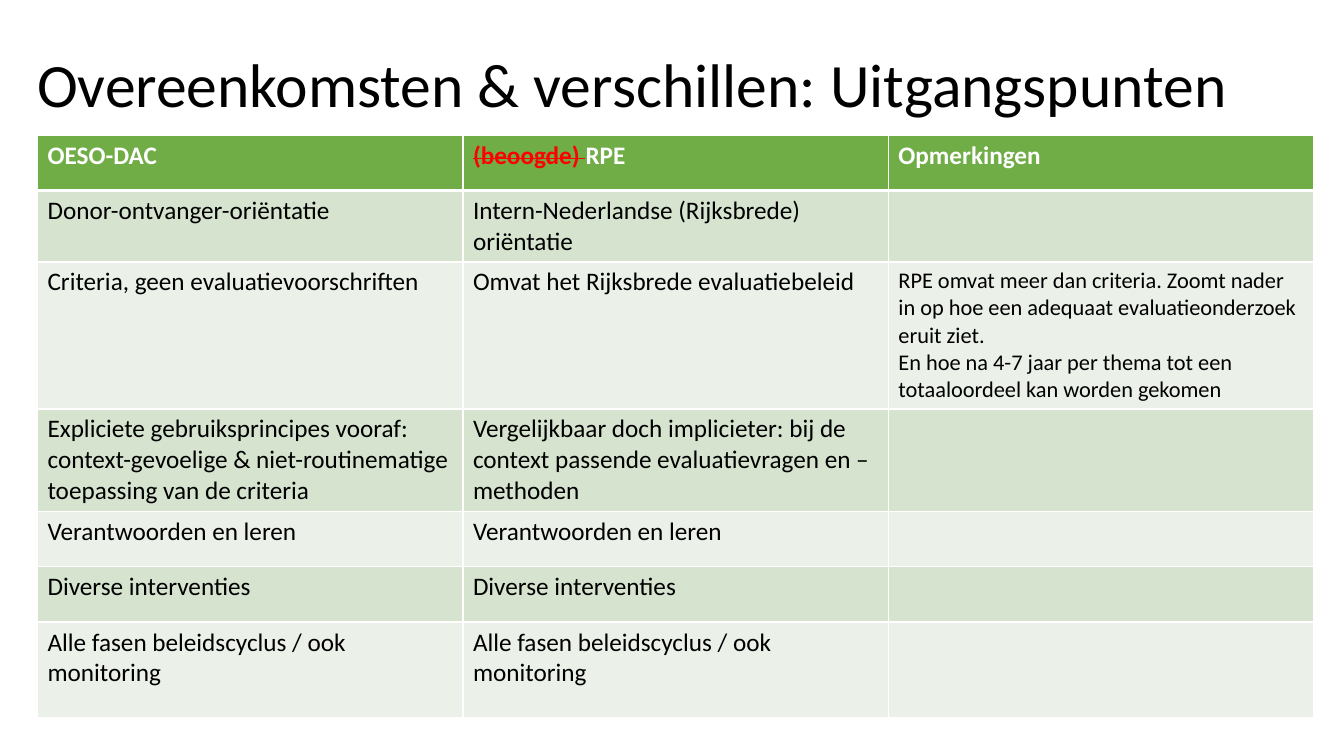
from pptx import Presentation
from pptx.dml.color import RGBColor
from pptx.enum.text import MSO_ANCHOR
from pptx.oxml import parse_xml
from pptx.oxml.ns import nsdecls
from pptx.util import Pt

COLORS = {
    "white": "FFFFFF",
    "black": "000000",
    "red": "FF0000",
    "header": "70AD47",
    "band_dark": "D5E3CF",
    "band_light": "EBF1E9",
}

HEADINGS = ["OESO-DAC", "RPE", "Opmerkingen"]
PRINCIPLES = [
    ["Donor-ontvanger-oriëntatie", "Intern-Nederlandse (Rijksbrede) oriëntatie"],
    ["Criteria, geen evaluatievoorschriften", "Omvat het Rijksbrede evaluatiebeleid"],
    ["Expliciete gebruiksprincipes vooraf: context-gevoelige & niet-routinematige "
     "toepassing van de criteria",
     "Vergelijkbaar doch implicieter: bij de context passende evaluatievragen en –methoden"],
    ["Verantwoorden en leren"] * 2,
    ["Diverse interventies"] * 2,
    ["Alle fasen beleidscyclus / ook monitoring"] * 2,
]
REMARKS = [
    "RPE omvat meer dan criteria. Zoomt nader in op hoe een adequaat "
    "evaluatieonderzoek eruit ziet.",
    "En hoe na 4-7 jaar per thema tot een totaaloordeel kan worden gekomen",
]
ROW_HEIGHTS = [39.6, 51, 105, 73, 39.6, 39.6, 68.4]
COLUMN_WIDTH = 303.9


class SlideBuilder:
    def __init__(self, slide, font="Calibri"):
        self.slide = slide
        self.font = font

    def add_text(self, paragraph, text, color="black", strike=False, **format_values):
        run = paragraph.add_run()
        run.text = text
        values = {"name": self.font, "size": Pt(18), "bold": False, **format_values}
        for attribute, value in values.items():
            setattr(run.font, attribute, value)
        run.font.color.rgb = RGBColor.from_string(COLORS[color])
        if strike:
            run._r.get_or_add_rPr().set("strike", "sngStrike")

    def title(self, text, left, top, width, height):
        frame = self.slide.shapes.add_textbox(
            Pt(left), Pt(top), Pt(width), Pt(height)).text_frame
        for attribute, value in {"word_wrap": True,
                                 "vertical_anchor": MSO_ANCHOR.MIDDLE}.items():
            setattr(frame, attribute, value)
        paragraph = frame.paragraphs[0]
        paragraph.line_spacing = 0.9
        self.add_text(paragraph, text, size=Pt(44))

    def table(self, left, top, column_width, columns, row_heights):
        table = self.slide.shapes.add_table(
            len(row_heights), columns, Pt(left), Pt(top),
            Pt(column_width * columns), Pt(sum(row_heights))).table
        for column in table.columns:
            column.width = Pt(column_width)
        for index, height in enumerate(row_heights):
            table.rows[index].height = Pt(height)
            fill = "header" if index == 0 else "band_dark" if index % 2 else "band_light"
            for cell in table.rows[index].cells:
                self.style_cell(cell, fill, top=3 if index == 1 else 1,
                                bottom=3 if index == 0 else 1)
        return table

    def style_cell(self, cell, fill, top, bottom):
        properties = cell._tc.get_or_add_tcPr()
        for side, width in {"L": 1, "R": 1, "T": top, "B": bottom}.items():
            properties.append(parse_xml(
                f'<a:ln{side} {nsdecls("a")} w="{Pt(width)}"><a:solidFill>'
                f'<a:srgbClr val="{COLORS["white"]}"/></a:solidFill></a:ln{side}>'))
        cell.fill.solid()
        cell.fill.fore_color.rgb = RGBColor.from_string(COLORS[fill])


def main():
    presentation = Presentation()
    presentation.slide_width, presentation.slide_height = Pt(960), Pt(540)
    builder = SlideBuilder(presentation.slides.add_slide(presentation.slide_layouts[6]))

    # Title
    builder.title("Overeenkomsten & verschillen: Uitgangspunten", 19.4, 28.1, 918.7, 68.4)

    # Comparison table
    comparison = builder.table(26.8, 96.5, COLUMN_WIDTH, len(HEADINGS), ROW_HEIGHTS)

    # Header row, with the struck-out word before RPE
    for column, heading in enumerate(HEADINGS):
        paragraph = comparison.cell(0, column).text_frame.paragraphs[0]
        if heading == "RPE":
            builder.add_text(paragraph, "(beoogde) ", "red", strike=True, bold=True)
        builder.add_text(paragraph, heading, "white", bold=True)

    # Principles side by side
    for row, principles in enumerate(PRINCIPLES, start=1):
        for column, principle in enumerate(principles):
            builder.add_text(comparison.cell(row, column).text_frame.paragraphs[0], principle)

    # Remarks on the criteria row
    remarks_frame = comparison.cell(2, 2).text_frame
    remarks_frame.add_paragraph()
    for paragraph, remark in zip(remarks_frame.paragraphs, REMARKS):
        builder.add_text(paragraph, remark, size=Pt(16))

    presentation.save("out.pptx")


if __name__ == "__main__":
    main()
